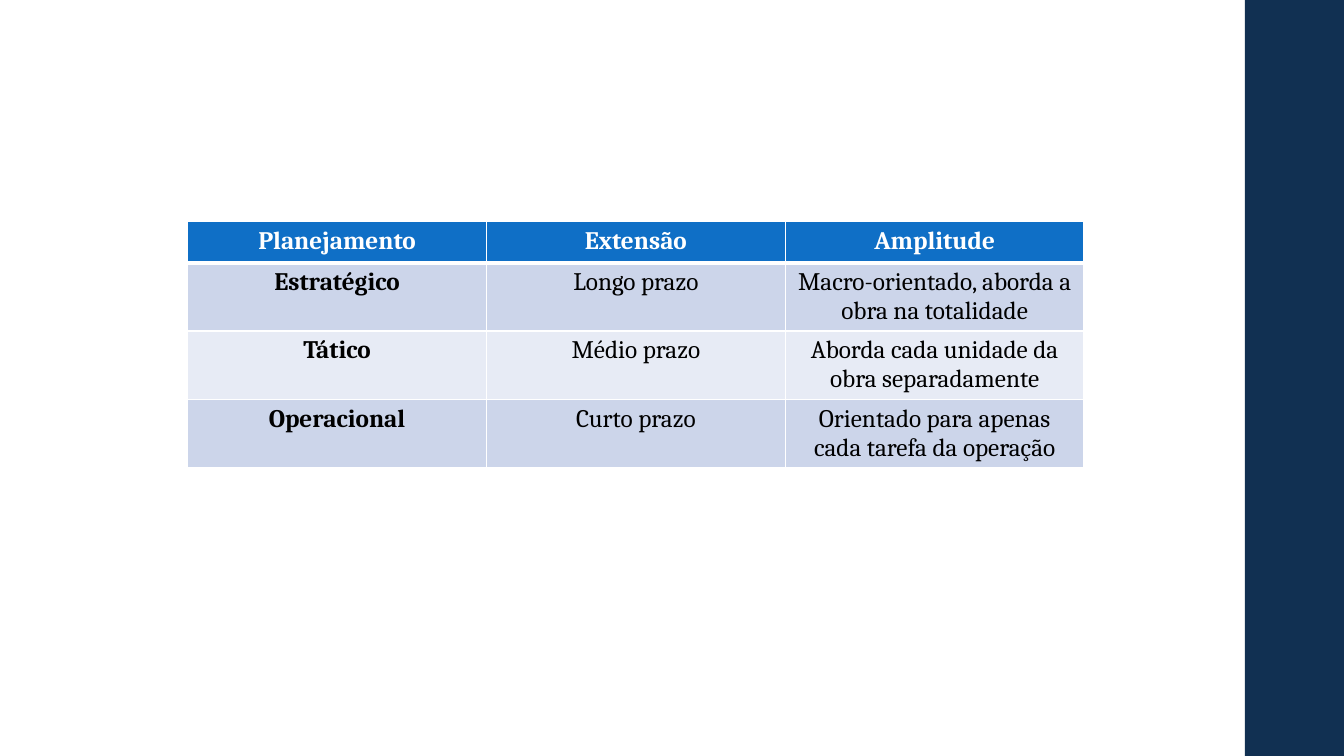
import pptx
import pptx.dml.color
import pptx.enum.shapes
import pptx.enum.text
import pptx.oxml
import pptx.oxml.ns
import pptx.util
from pptx.util import Cm

NAVY, BLUE, WHITE, BLACK = "113052", "0F6FC6", "FFFFFF", "000000"
BANDS = ["CCD5EA", "E7EBF5"]

PLANNING_LEVELS = [
    ["Planejamento", "Extensão", "Amplitude"],
    ["Estratégico", "Longo prazo", "Macro-orientado, aborda a obra na totalidade"],
    ["Tático", "Médio prazo", "Aborda cada unidade da obra separadamente"],
    ["Operacional", "Curto prazo", "Orientado para apenas cada tarefa da operação"],
]
COLUMN_WIDTH, ROW_HEIGHT = Cm(7.53), Cm(1.03)


def set_fill(target, color):
    target.fill.solid()
    target.fill.fore_color.rgb = pptx.dml.color.RGBColor.from_string(color)


def write(frame, text, size=18, color=BLACK, bold=False, font="Cambria"):
    paragraph = frame.paragraphs[0]
    paragraph.alignment = pptx.enum.text.PP_ALIGN.CENTER
    run = paragraph.add_run()
    run.text = text
    run.font.name, run.font.size, run.font.bold = font, pptx.util.Pt(size), bold
    run.font.color.rgb = pptx.dml.color.RGBColor.from_string(color)


def set_borders(cell, widths, color=WHITE):
    """Draw the cell edges; borders must precede the fill in the XML."""
    properties = cell._tc.get_or_add_tcPr()
    for position, (side, width) in enumerate(widths.items()):
        edge = pptx.oxml.parse_xml(
            f'<a:ln{side} {pptx.oxml.ns.nsdecls("a")} w="{pptx.util.Pt(width)}">'
            f'<a:solidFill><a:srgbClr val="{color}"/></a:solidFill></a:ln{side}>')
        properties.insert(position, edge)


def add_side_band(slide, left, width, height):
    band = slide.shapes.add_shape(
        pptx.enum.shapes.MSO_SHAPE.RECTANGLE, left, 0, width, height)
    set_fill(band, NAVY)
    band.line.fill.background()
    band.shadow.inherit = False


def add_planning_table(slide, left, top):
    row_count, column_count = len(PLANNING_LEVELS), len(PLANNING_LEVELS[0])
    planning = slide.shapes.add_table(
        row_count, column_count, left, top,
        COLUMN_WIDTH * column_count, ROW_HEIGHT * row_count).table
    for row, level in enumerate(PLANNING_LEVELS):
        header = row == 0
        for column, text in enumerate(level):
            cell = planning.cell(row, column)
            set_fill(cell, BLUE if header else BANDS[(row - 1) % 2])
            set_borders(cell, {"L": 1, "R": 1, "T": 3 if row == 1 else 1,
                               "B": 3 if header else 1})
            write(cell.text_frame, text, color=WHITE if header else BLACK,
                  bold=header or column == 0)


def main():
    presentation = pptx.Presentation()
    presentation.slide_width, presentation.slide_height = Cm(33.87), Cm(19.05)
    slide = presentation.slides.add_slide(presentation.slide_layouts[6])

    # Dark band on the right edge
    add_side_band(slide, Cm(31.37), Cm(2.5), presentation.slide_height)

    # Planning levels
    add_planning_table(slide, Cm(4.73), Cm(5.59))

    presentation.save("out.pptx")


if __name__ == "__main__":
    main()
